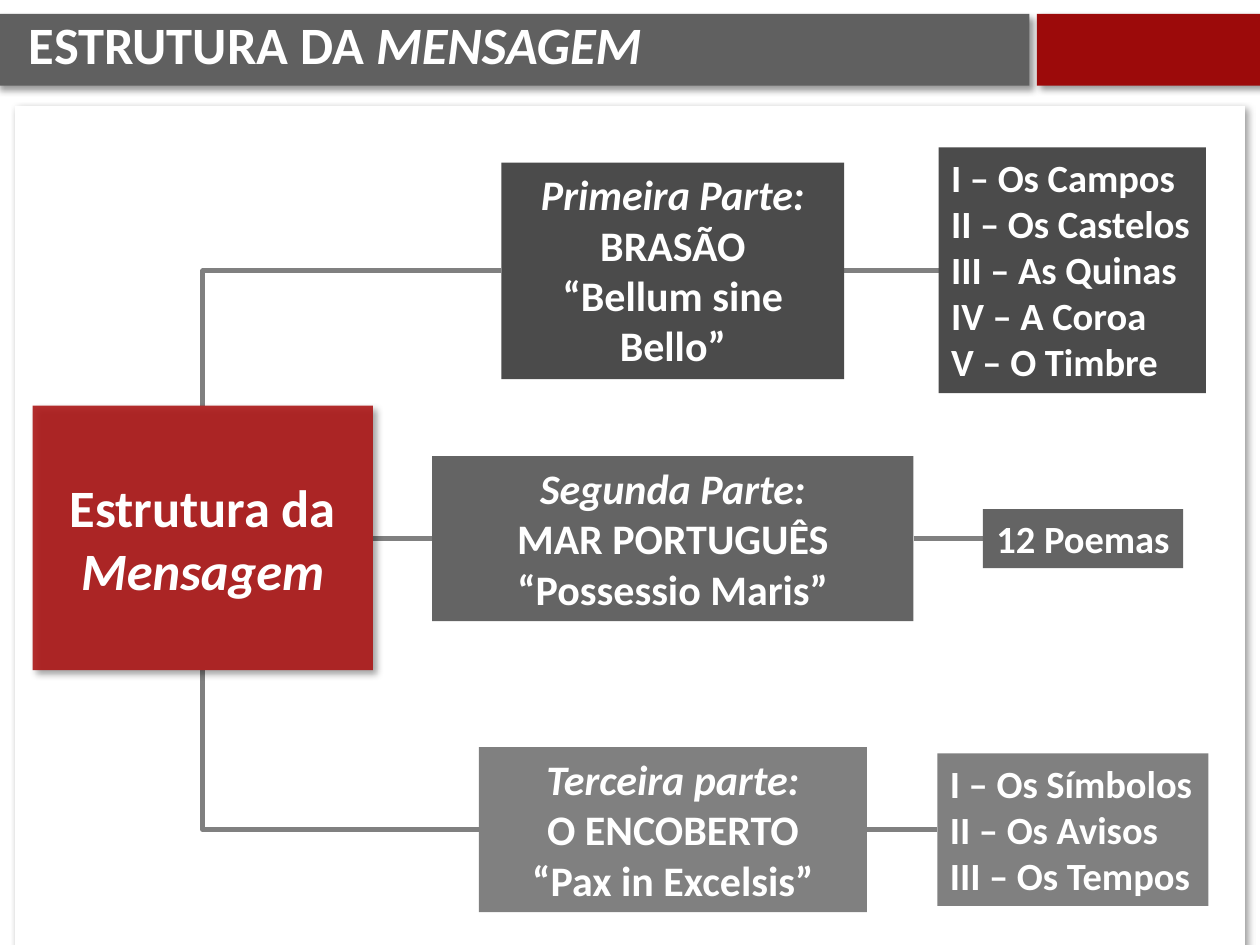
from lxml import etree
from pptx import Presentation
from pptx import util as u
from pptx.dml.color import RGBColor
from pptx.enum import shapes, text
from pptx.oxml import parse_xml
from pptx.oxml.ns import qn

WIDTH, HEIGHT = u.Inches(10), u.Inches(7.5)
COLUMN, ROW = WIDTH / 100, HEIGHT / 75
FONT = "Calibri"
COLOURS = {
    "white": "FFFFFF", "bar": "606060", "accent": "9C0A0A", "root": "AC1919",
    "line": "808080", "dark": "4B4B4B", "middle": "646464", "light": "808080",
}
SHADOW = (
    '<a:effectLst xmlns:a="http://schemas.openxmlformats.org/drawingml/2006/main">'
    '<a:outerShdw blurRad="50800" dist="38100" dir="2700000" algn="tl" rotWithShape="0">'
    '<a:srgbClr val="000000"><a:alpha val="40000"/></a:srgbClr>'
    '</a:outerShdw></a:effectLst>'
)
ROOT = (2.6, 32.2, 27, 21)
BRANCHES = [
    ("dark", (39.8, 12.9, 27.2, 17.2), ["Primeira Parte:", "BRASÃO", "“Bellum sine Bello”"],
     (74.5, 11.7, 21.2, 19.5),
     ["I – Os Campos", "II – Os Castelos", "III – As Quinas", "IV – A Coroa", "V – O Timbre"]),
    ("middle", (34.3, 36.2, 38.2, 13.1), ["Segunda Parte:", "MAR PORTUGUÊS", "“Possessio Maris”"],
     (78, 40.4, 15.9, 4.7), ["12 Poemas"]),
    ("light", (38, 59.3, 30.8, 13.1), ["Terceira parte:", "O ENCOBERTO", "“Pax in Excelsis”"],
     (74.4, 59.8, 21.5, 12.1), ["I – Os Símbolos", "II – Os Avisos", "III – Os Tempos"]),
]


def place(box):
    """Turn grid columns and rows into slide lengths."""
    left, top, width, height = box
    return [round(n) for n in (left * COLUMN, top * ROW, width * COLUMN, height * ROW)]


def add_block(page, box, colour, shadow=False, opacity=None):
    """Add a borderless filled rectangle."""
    block = page.shapes.add_shape(shapes.MSO_SHAPE.RECTANGLE, *place(box))
    block.fill.solid()
    block.fill.fore_color.rgb = RGBColor.from_string(COLOURS[colour])
    block.line.fill.background()
    block.shadow.inherit = False
    properties = block._element.spPr
    if shadow:
        properties.replace(properties.find(qn("a:effectLst")), parse_xml(SHADOW))
    if opacity:
        tint = properties.find(qn("a:solidFill"))[0]
        etree.SubElement(tint, qn("a:alpha")).set("val", str(opacity * 1000))
    return block


def style(item, size, italic=None):
    """Set the white bold font of a paragraph."""
    item.font.name, item.font.size, item.font.bold = FONT, u.Pt(size), True
    item.font.italic = italic
    item.font.color.rgb = RGBColor.from_string(COLOURS["white"])


def write(block, lines, size, centred=True, italic_line=None, wrap=True):
    """Write one paragraph for each line."""
    frame = block.text_frame
    frame.word_wrap = wrap
    frame.vertical_anchor = text.MSO_ANCHOR.TOP
    frame.auto_size = text.MSO_AUTO_SIZE.SHAPE_TO_FIT_TEXT
    for index, line in enumerate(lines):
        paragraph = frame.paragraphs[0] if index == 0 else frame.add_paragraph()
        paragraph.text = line
        paragraph.alignment = text.PP_ALIGN.CENTER if centred else text.PP_ALIGN.LEFT
        style(paragraph, size, index == italic_line)


def add_link(page, start, end):
    """Join two grid points, with one corner when the rows differ."""
    bent = start[1] != end[1]
    kind = shapes.MSO_CONNECTOR.ELBOW if bent else shapes.MSO_CONNECTOR.STRAIGHT
    link = page.shapes.add_connector(kind, *place((*start, *end)))
    properties = link._element.spPr
    if bent:
        properties.find(qn("a:prstGeom")).set("prst", "bentConnector2")
    link.line.color.rgb = RGBColor.from_string(COLOURS["line"])
    link.line.width = u.Pt(2.75)
    etree.SubElement(properties, qn("a:effectLst"))


def add_header(page):
    """Draw the title bar and place the title on it."""
    add_block(page, (-0.4, 1.1, 82.1, 5.7), "bar", shadow=True)
    add_block(page, (82.3, 1.1, 18.1, 5.7), "accent", shadow=True)
    title = page.shapes.title
    title.left, title.top, title.width, title.height = place((1.3, 0, 63.6, 7.6))
    page.shapes._spTree.append(title._element)
    title.text_frame.vertical_anchor = text.MSO_ANCHOR.MIDDLE
    paragraph = title.text_frame.paragraphs[0]
    paragraph.alignment, paragraph.line_spacing = text.PP_ALIGN.LEFT, 0.9
    for words, italic in (("ESTRUTURA DA ", False), ("MENSAGEM", True)):
        span = paragraph.add_run()
        span.text = words
        style(span, 30, italic)


def add_root(page, box):
    """Draw the root block with its centred label."""
    left, top, width, height = box
    add_block(page, box, "root", shadow=True, opacity=91)
    label = page.shapes.add_textbox(*place((left, top + height / 2 - 5.5, width, 11.1)))
    write(label, ["Estrutura da", "Mensagem"], 30, italic_line=1)


def add_branch(page, root, colour, part, lines, leaf, items):
    """Draw one part, its contents and the links that join them."""
    left, top, width, height = root
    middle = part[1] + part[3] / 2
    if middle < top:
        anchor = (left + width / 2, top)
    elif middle > top + height:
        anchor = (left + width / 2, top + height)
    else:
        anchor = (left + width, middle)
    add_link(page, (part[0], middle), anchor)
    add_link(page, (part[0] + part[2], middle), (leaf[0], middle))
    write(add_block(page, part, colour), lines, 24, italic_line=0)
    write(add_block(page, leaf, colour), items, 22, centred=len(items) == 1, wrap=False)


def main():
    """Build the deck and save it."""
    deck = Presentation()
    deck.slide_width, deck.slide_height = WIDTH, HEIGHT
    page = deck.slides.add_slide(deck.slide_layouts[5])
    add_header(page)
    add_block(page, (1.2, 8.4, 97.6, 67.1), "white", shadow=True)
    for branch in BRANCHES:
        add_branch(page, ROOT, *branch)
    add_root(page, ROOT)
    deck.save("out.pptx")


if __name__ == "__main__":
    main()
